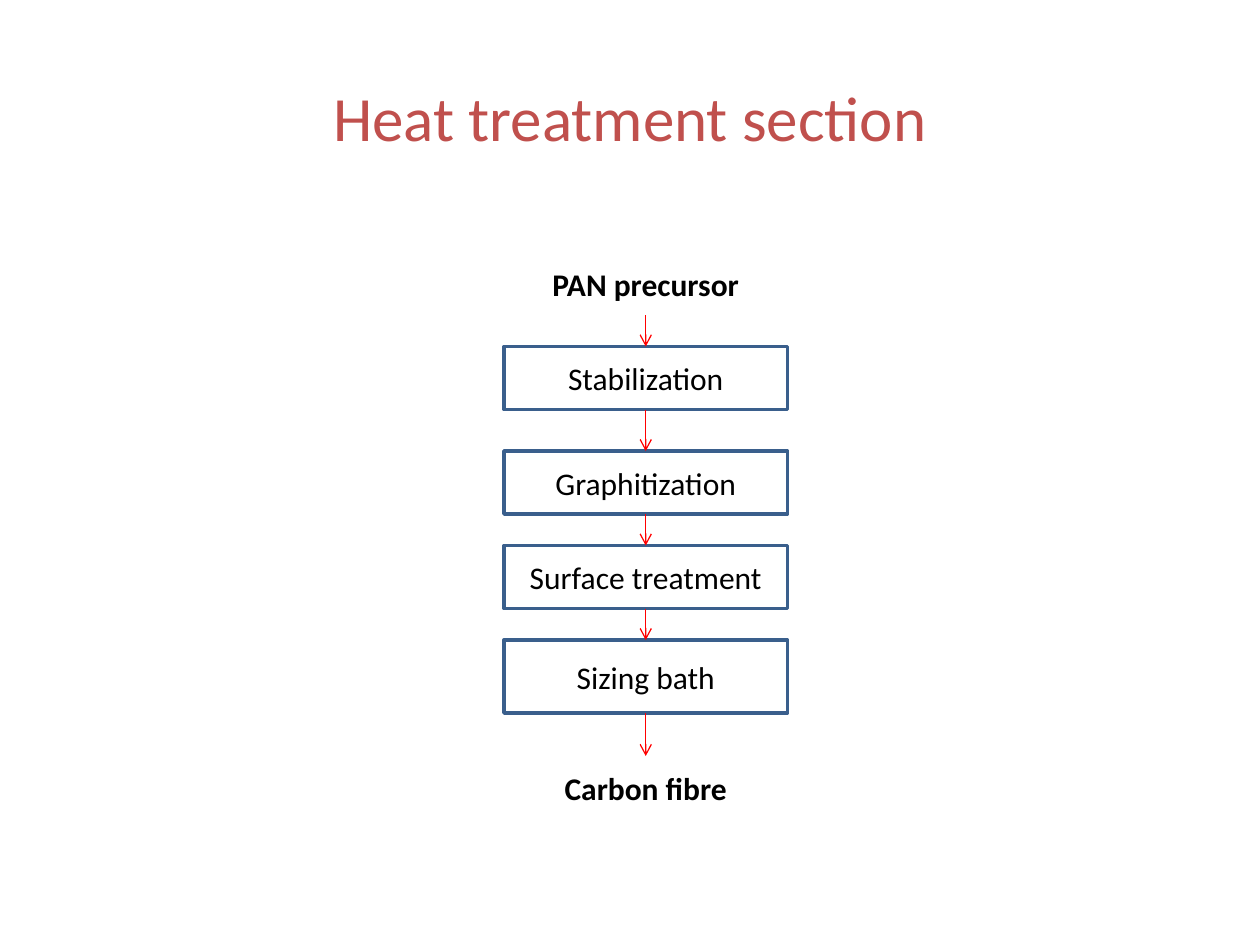
from itertools import pairwise

from lxml.etree import SubElement
from pptx import Presentation
from pptx.dml.color import RGBColor
from pptx.enum.shapes import MSO_CONNECTOR, MSO_SHAPE
from pptx.enum.text import MSO_ANCHOR, PP_ALIGN
from pptx.oxml.ns import qn
from pptx.util import Inches, Pt

FONT = "Calibri"
TITLE_RED = RGBColor(0xC0, 0x50, 0x4D)
BORDER_BLUE = RGBColor(0x3A, 0x5F, 0x8C)
ARROW_RED = RGBColor(0xFF, 0x00, 0x00)
WHITE = RGBColor(0xFF, 0xFF, 0xFF)
BLACK = RGBColor(0x00, 0x00, 0x00)

STEP_LEFT, STEP_WIDTH = 4, 2.25
STEP_CENTER = STEP_LEFT + STEP_WIDTH / 2

# Text, top, height, and whether the step is a process (boxed) or a material
STEPS = [
    ("PAN precursor", 2, 0.5, False),
    ("Stabilization", 2.75, 0.5, True),
    ("Graphitization", 3.58, 0.5, True),
    ("Surface treatment", 4.33, 0.5, True),
    ("Sizing bath", 5.08, 0.58, True),
    ("Carbon fibre", 6, 0.5, False),
]


def write_centered(shape, text, size, color, bold=False):
    frame = shape.text_frame
    frame.word_wrap = True
    frame.vertical_anchor = MSO_ANCHOR.MIDDLE
    paragraph = frame.paragraphs[0]
    paragraph.alignment = PP_ALIGN.CENTER
    run = paragraph.add_run()
    run.text = text
    run.font.name = FONT
    run.font.size = Pt(size)
    run.font.bold = bold
    run.font.color.rgb = color


def add_title(slide, text):
    title = slide.shapes.title
    title.left, title.top = Inches(0.5), Inches(0.3)
    title.width, title.height = Inches(9), Inches(1.25)
    write_centered(title, text, 36, TITLE_RED)


def add_step(slide, text, top, height, is_process):
    shape = slide.shapes.add_shape(
        MSO_SHAPE.RECTANGLE,
        Inches(STEP_LEFT), Inches(top), Inches(STEP_WIDTH), Inches(height))
    shape.shadow.inherit = False
    shape.fill.solid()
    shape.fill.fore_color.rgb = WHITE
    shape.line.color.rgb = BORDER_BLUE if is_process else WHITE
    shape.line.width = Pt(2)
    write_centered(shape, text, 18, BLACK, bold=not is_process)


def add_down_arrow(slide, start, end):
    arrow = slide.shapes.add_connector(
        MSO_CONNECTOR.STRAIGHT,
        Inches(STEP_CENTER), Inches(start), Inches(STEP_CENTER), Inches(end))
    arrow.line.color.rgb = ARROW_RED
    arrow.line.width = Pt(0.75)
    SubElement(arrow.line._get_or_add_ln(), qn("a:tailEnd"), type="arrow")
    SubElement(arrow._element.spPr, qn("a:effectLst"))


def main():
    presentation = Presentation()
    presentation.slide_width, presentation.slide_height = Inches(10), Inches(7.5)
    title_only = presentation.slide_layouts[5]
    slide = presentation.slides.add_slide(title_only)

    add_title(slide, "Heat treatment section")
    for step in STEPS:
        add_step(slide, *step)
    for (_, top, height, _), (_, next_top, _, _) in pairwise(STEPS):
        add_down_arrow(slide, top + height, next_top)

    presentation.save("out.pptx")


if __name__ == "__main__":
    main()
